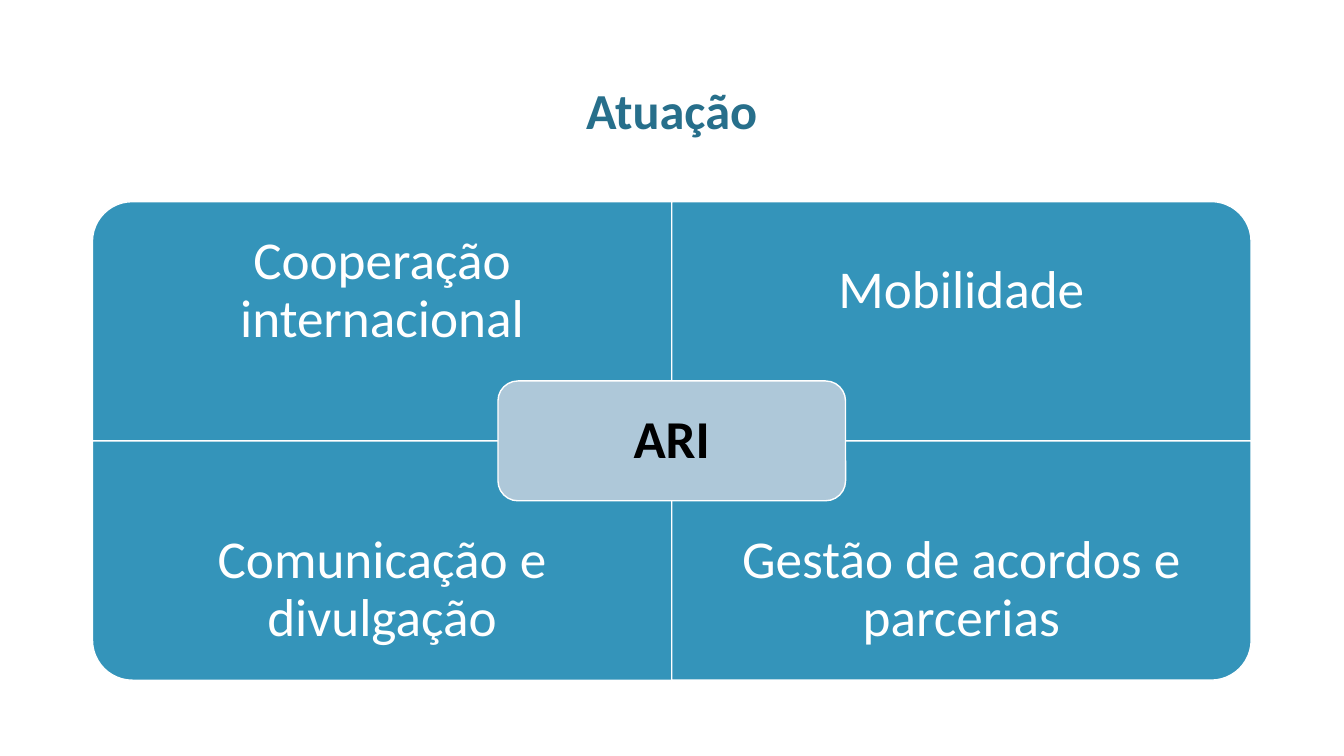
import pptx
import pptx.util
import pptx.dml.color
import pptx.enum.shapes
import pptx.enum.text

Cm = pptx.util.Cm
KIND = pptx.enum.shapes.MSO_SHAPE

BLUE, PALE, DARK = "3494BA", "AEC8D9", "276F8B"
WHITE, BLACK = "FFFFFF", "000000"

MID_X, MID_Y = 16.93, 11.11
WIDE, HIGH = 14.6, 6.03
LABEL = 4.53

# text, column, row, turn that points the round corner outwards
PARTS = [
    ("Cooperação internacional", 0, 0, 270),
    ("Mobilidade", 1, 0, 0),
    ("Comunicação e divulgação", 0, 1, 180),
    ("Gestão de acordos e parcerias", 1, 1, 90),
]


def color(code):
    return pptx.dml.color.RGBColor.from_string(code)


def write(shape, text, size=38, hue=WHITE, bold=False, inset=0.76):
    frame = shape.text_frame
    frame.word_wrap = True
    frame.auto_size = pptx.enum.text.MSO_AUTO_SIZE.NONE
    frame.vertical_anchor = pptx.enum.text.MSO_ANCHOR.MIDDLE
    frame.margin_left = frame.margin_right = Cm(inset)
    frame.margin_top = frame.margin_bottom = Cm(inset)
    para = frame.paragraphs[0]
    para.alignment = pptx.enum.text.PP_ALIGN.CENTER
    para.line_spacing = 0.9
    run = para.add_run()
    run.text = text
    run.font.name = "Calibri"
    run.font.size = pptx.util.Pt(size)
    run.font.bold = bold
    run.font.color.rgb = color(hue)


def block(shapes, kind, x, y, wide, high, fill, turn=0):
    """Add a filled shape centred on x, y."""
    shape = shapes.add_shape(kind, Cm(x - wide / 2), Cm(y - high / 2),
                             Cm(wide), Cm(high))
    shape.rotation = turn
    shape.shadow.inherit = False
    shape.fill.solid()
    shape.fill.fore_color.rgb = color(fill)
    shape.line.color.rgb = color(WHITE)
    shape.line.width = pptx.util.Pt(1)
    return shape


def quarter(shapes, text, col, row, turn):
    x = MID_X + (col - 0.5) * WIDE
    y = MID_Y + (row - 0.5) * HIGH
    size = (HIGH, WIDE) if turn % 180 else (WIDE, HIGH)
    block(shapes, KIND.ROUND_1_RECTANGLE, x, y, *size, BLUE, turn)
    top = MID_Y + HIGH - LABEL if row else MID_Y - HIGH
    box = shapes.add_textbox(Cm(x - WIDE / 2), Cm(top), Cm(WIDE), Cm(LABEL))
    write(box, text)


def head(slide, text):
    title = slide.shapes.title
    title.left, title.top = Cm(2.33), Cm(1.01)
    title.width, title.height = Cm(29.2), Cm(3.68)
    write(title, text, size=36, hue=DARK, bold=True, inset=0.25)


def main():
    deck = pptx.Presentation()
    deck.slide_width, deck.slide_height = Cm(33.87), Cm(19.05)
    slide = deck.slides.add_slide(deck.slide_layouts[5])
    head(slide, "Atuação")
    matrix = slide.shapes.add_group_shape().shapes
    for part in PARTS:
        quarter(matrix, *part)
    core = block(matrix, KIND.ROUNDED_RECTANGLE, MID_X, MID_Y,
                 8.76, 3.02, PALE)
    write(core, "ARI", hue=BLACK, bold=True, inset=0.4)
    deck.save("out.pptx")


if __name__ == "__main__":
    main()
